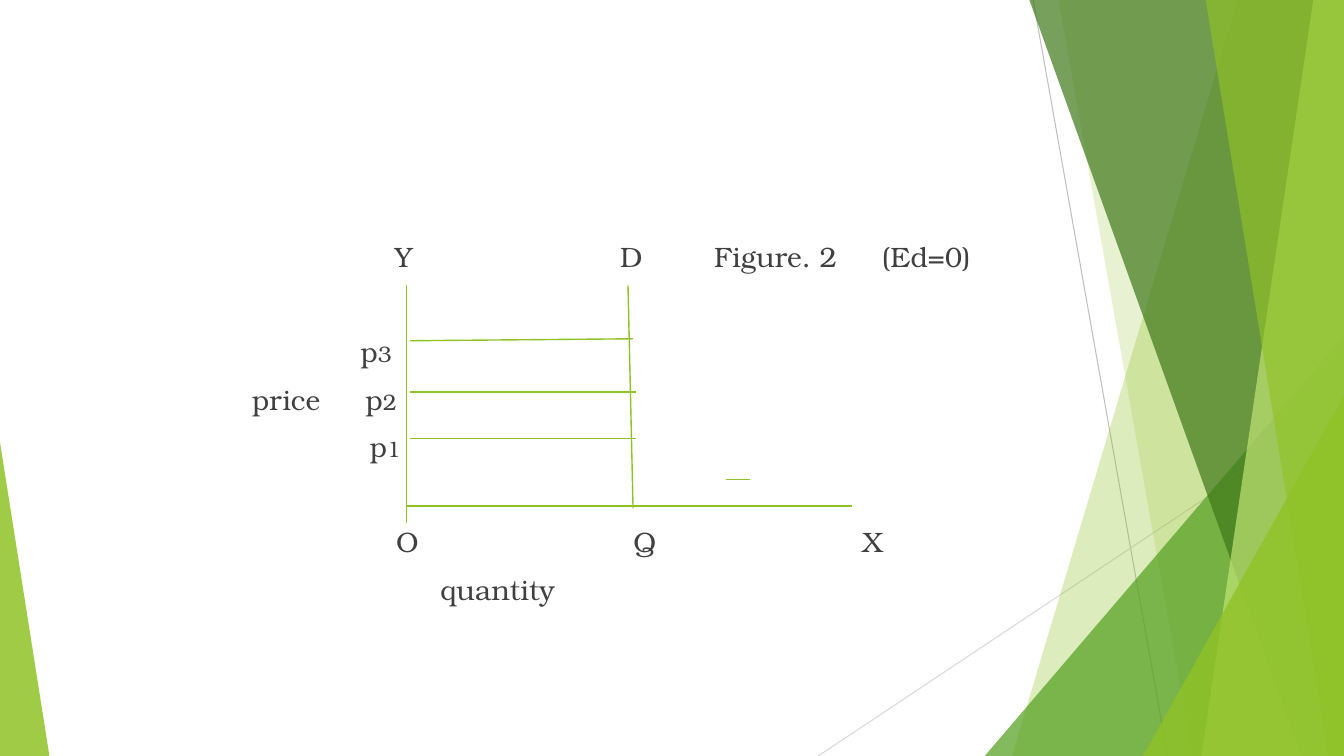
from lxml import etree
from pptx import Presentation
from pptx.dml.color import RGBColor
from pptx.enum.shapes import MSO_CONNECTOR, MSO_SHAPE
from pptx.oxml.ns import qn
from pptx.util import Pt

COLORS = {
    "lime": "90C226", "green": "54A021", "forest": "3F7819", "pale": "C0E474",
    "grey": "BFBFBF", "light grey": "D9D9D9", "text": "404040",
}
WIDTH, HEIGHT = 960, 540

prs = Presentation()
prs.slide_width, prs.slide_height = Pt(WIDTH), Pt(HEIGHT)
s = prs.slides.add_slide(prs.slide_layouts[6])


def add_text(text, left, top, width=120, height=25, size=20,
             font="TeX Gyre Bonum", color="text", sub="", sub_size=16):
    """Add a one-line label, with an optional smaller ending."""
    tf = s.shapes.add_textbox(Pt(left), Pt(top), Pt(width), Pt(height)).text_frame
    tf.word_wrap = True
    tf.margin_left = tf.margin_right = tf.margin_top = tf.margin_bottom = 0
    p = tf.paragraphs[0]
    for part, part_size in ((text, size), (sub, sub_size)):
        if part:
            r = p.add_run()
            r.text = part
            r.font.size = Pt(part_size)
            r.font.name = font
            r.font.color.rgb = RGBColor.from_string(COLORS[color])


def add_line(x1, y1, x2, y2, color="lime", weight=1):
    line = s.shapes.add_connector(MSO_CONNECTOR.STRAIGHT, Pt(x1), Pt(y1), Pt(x2), Pt(y2))
    line.line.color.rgb = RGBColor.from_string(COLORS[color])
    line.line.width = Pt(weight)
    etree.SubElement(line._element.spPr, qn("a:effectLst"))


# Background facets, from back to front
add_line(738, 0, 834, 540, "grey", 0.75)
add_line(960, 290, 584.5, 540, "light grey", 0.75)

# A band runs from its top and bottom x to the right edge of the slide;
# a triangle has its left, top, width, height and apex position.
facets = [
    ("band", (884.2, 722.9), "lime", 30),
    ("band", (756, 851.8), "lime", 20),
    ("triangle", (703.4, 240, 256.6, 300, 1), "green", 72),
    ("band", (735.1, 929.5), "forest", 70),
    ("band", (938.2, 858.2), "pale", 70),
    ("band", (861.1, 949), "lime", 65),
    ("triangle", (816.5, 283, 143.5, 257, 1), "lime", 80),
    ("triangle", (0, 316, 35.3, 224, 0), "lime", 85),
]
for kind, geometry, color, opacity in facets:
    if kind == "band":
        x_top, x_bottom = geometry
        outline = s.shapes.build_freeform(Pt(x_top), Pt(-0.6))
        outline.add_line_segments(
            [(Pt(x), Pt(y)) for x, y in
             ((WIDTH, -0.6), (WIDTH, HEIGHT), (x_bottom, HEIGHT))])
        sp = outline.convert_to_shape()
    else:
        *box, apex = geometry
        sp = s.shapes.add_shape(MSO_SHAPE.ISOSCELES_TRIANGLE, *map(Pt, box))
        sp.adjustments[0] = apex
    sp.shadow.inherit = False
    sp.line.fill.background()
    sp.fill.solid()
    sp.fill.fore_color.rgb = RGBColor.from_string(COLORS[color])
    rgb = sp._element.spPr.find(qn("a:solidFill"))[0]
    etree.SubElement(rgb, qn("a:alpha"), val=str(opacity * 1000))

# Labels: row number, left, text, small ending
FIRST_ROW, ROW_PITCH = 171, 34
labels = [
    (0, 282, "Y", ""), (0, 443, "D", ""), (0, 510, "Figure. 2", ""), (0, 630, "(Ed=0)", ""),
    (2, 257.5, "p", "3"),
    (3, 180, "price", ""), (3, 261, "p", "2"),
    (4, 264, "p", "1"),
    (6, 283, "O", ""), (6, 452.5, "Q", ""), (6, 616, "X", ""),
    (7, 314.5, "quantity", ""),
]
for row, left, text, sub in labels:
    add_text(text, left, FIRST_ROW + row * ROW_PITCH, sub=sub)

# Diagram: dash, x axis, price levels p1 to p3, demand line, y axis
for ends in [
    (518.4, 342.7, 535.7, 342.7),
    (290.2, 361.4, 608.4, 361.4),
    (293, 313.2, 454.3, 313.2),
    (293, 280, 454.3, 280),
    (293, 243.4, 452.2, 242),
    (448.6, 203.8, 452.2, 362.9),
    (290.2, 203.8, 290.2, 373.7),
]:
    add_line(*ends)

prs.save("out.pptx")
